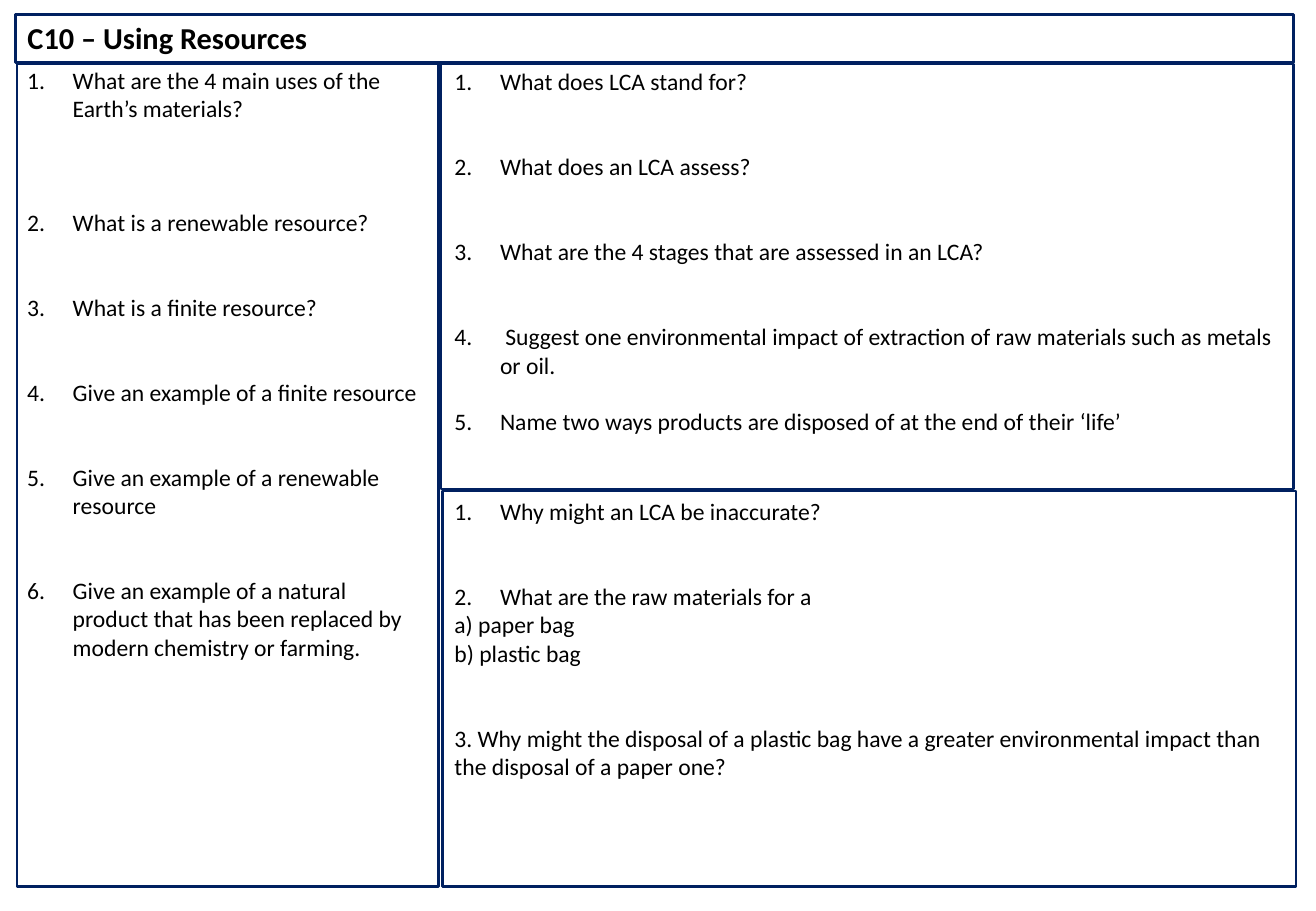
from dataclasses import dataclass

from lxml.etree import SubElement
from pptx import Presentation
from pptx.dml.color import RGBColor
from pptx.enum.shapes import MSO_SHAPE
from pptx.oxml.ns import qn
from pptx.util import Pt


@dataclass(frozen=True)
class Theme:
    font: str = "Calibri"
    ink: RGBColor = RGBColor(0, 0, 0)
    border: RGBColor = RGBColor(0x00, 0x20, 0x60)
    border_width: float = 1.5
    title_size: int = 18
    body_size: int = 14
    answer_line: float = 16.8
    indent: int = 27


class Worksheet:
    def __init__(self, slide, theme):
        self.slide = slide
        self.theme = theme

    def frame(self, left, top, width, height):
        panel = self.slide.shapes.add_shape(
            MSO_SHAPE.RECTANGLE, Pt(left), Pt(top), Pt(width), Pt(height))
        panel.shadow.inherit = False
        panel.fill.background()
        panel.line.color.rgb = self.theme.border
        panel.line.width = Pt(self.theme.border_width)

    def text_area(self, left, top, width, height):
        area = self.slide.shapes.add_textbox(
            Pt(left), Pt(top), Pt(width), Pt(height)).text_frame
        area.word_wrap = True
        return area

    def add_wording(self, paragraph, wording, size, bold=False):
        run = paragraph.add_run()
        run.text = wording
        run.font.name = self.theme.font
        run.font.size = Pt(size)
        run.font.bold = bold
        run.font.color.rgb = self.theme.ink

    def title(self, wording, *box):
        area = self.text_area(*box)
        self.add_wording(area.paragraphs[0], wording, self.theme.title_size, bold=True)

    def number(self, paragraph):
        properties = paragraph._p.get_or_add_pPr()
        properties.set("marL", str(Pt(self.theme.indent)))
        properties.set("indent", str(-Pt(self.theme.indent)))
        SubElement(properties, qn("a:buFont"), typeface="+mj-lt")
        SubElement(properties, qn("a:buAutoNum"), type="arabicPeriod")

    def questions(self, entries, *box):
        area = self.text_area(*box)
        for position, (wording, numbered, answer_lines) in enumerate(entries):
            paragraph = area.add_paragraph() if position else area.paragraphs[0]
            paragraph.space_after = Pt(answer_lines * self.theme.answer_line)
            if numbered:
                self.number(paragraph)
            self.add_wording(paragraph, wording, self.theme.body_size)


RESOURCE_QUESTIONS = [
    ("What are the 4 main uses of the Earth’s materials?", True, 3),
    ("What is a renewable resource?", True, 2),
    ("What is a finite resource?", True, 2),
    ("Give an example of a finite resource", True, 2),
    ("Give an example of a renewable resource", True, 2),
    ("Give an example of a natural product that has been replaced by "
     "modern chemistry or farming.", True, 0),
]
LCA_QUESTIONS = [
    ("What does LCA stand for?", True, 2),
    ("What does an LCA assess?", True, 2),
    ("What are the 4 stages that are assessed in an LCA?", True, 2),
    (" Suggest one environmental impact of extraction of raw materials "
     "such as metals or oil.", True, 1),
    ("Name two ways products are disposed of at the end of their ‘life’", True, 0),
]
BAG_QUESTIONS = [
    ("Why might an LCA be inaccurate?", True, 2),
    ("What are the raw materials for a", True, 0),
    ("a) paper bag", False, 0),
    ("b) plastic bag", False, 2),
    ("3. Why might the disposal of a plastic bag have a greater environmental "
     "impact than the disposal of a paper one?", False, 0),
]


def main():
    deck = Presentation()
    deck.slide_width, deck.slide_height = Pt(780), Pt(540)
    sheet = Worksheet(deck.slides.add_slide(deck.slide_layouts[6]), Theme())

    sheet.title("C10 – Using Resources", 9.2, 8, 483, 29)
    sheet.questions(RESOURCE_QUESTIONS, 9, 35.4, 250.5, 397.5)
    sheet.frame(9.2, 8.7, 757.5, 28.3)
    sheet.frame(10, 37.6, 250, 488)
    sheet.frame(262.3, 291, 506, 234.6)
    sheet.questions(BAG_QUESTIONS, 262.3, 291, 499.7, 224)
    sheet.questions(LCA_QUESTIONS, 262.3, 36.2, 499.7, 241)
    sheet.frame(261.3, 38, 505.4, 252)

    deck.save("out.pptx")


if __name__ == "__main__":
    main()
